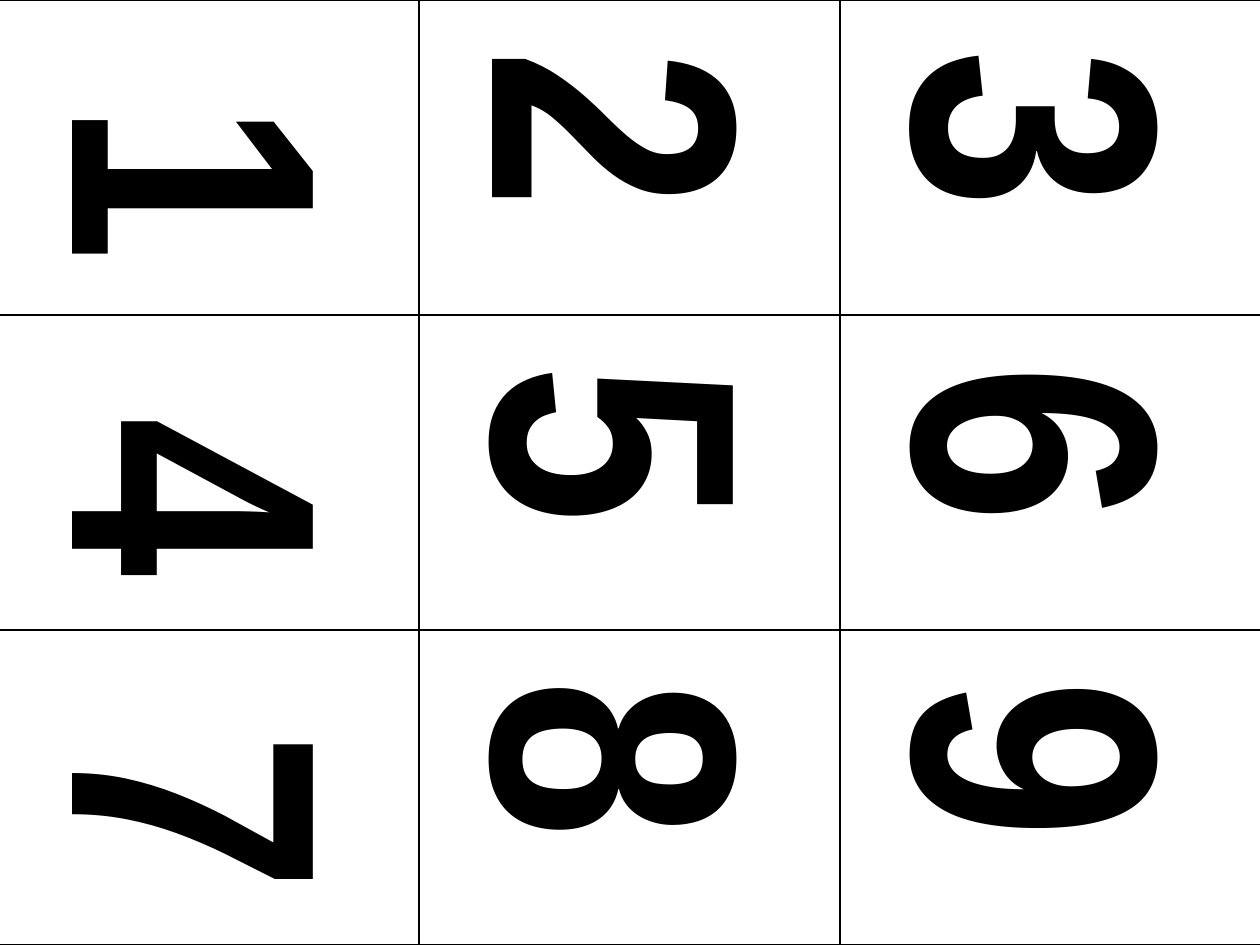
import pptx
import pptx.util
import pptx.dml.color
import pptx.enum.text
import lxml.etree
import pptx.oxml.ns

Cm = pptx.util.Cm
BLACK = pptx.dml.color.RGBColor(0, 0, 0)
ALIGN = pptx.enum.text.PP_ALIGN
SIZE = 3


def border(props, side):
    line = lxml.etree.SubElement(props, pptx.oxml.ns.qn("a:" + side), w="12700")
    fill = lxml.etree.SubElement(line, pptx.oxml.ns.qn("a:solidFill"))
    lxml.etree.SubElement(fill, pptx.oxml.ns.qn("a:srgbClr"), val=str(BLACK))


deck = pptx.Presentation()
deck.slide_width = Cm(25.4)
deck.slide_height = Cm(19.05)
slide = deck.slides.add_slide(deck.slide_layouts[6])

frame = slide.shapes.add_table(SIZE, SIZE, Cm(-0.03), Cm(0), Cm(25.44), Cm(19.05))
grid = frame.table
grid.first_row = False
grid.horz_banding = False
for col in grid.columns:
    col.width = Cm(8.48)
for row in grid.rows:
    row.height = Cm(6.35)

for index, cell in enumerate(grid.iter_cells()):
    cell.margin_left = Cm(1)
    cell.margin_top = cell.margin_right = cell.margin_bottom = Cm(0)
    cell.vertical_anchor = pptx.enum.text.MSO_ANCHOR.MIDDLE
    props = cell._tc.get_or_add_tcPr()
    props.set("vert", "vert")
    for side in ("lnL", "lnR", "lnT", "lnB"):
        border(props, side)
    cell.fill.background()

    para = cell.text_frame.paragraphs[0]
    para.alignment = ALIGN.CENTER if index % SIZE == 0 else ALIGN.LEFT
    run = para.add_run()
    run.text = str(index + 1)
    run.font.name = "Arial Narrow"
    run.font.size = pptx.util.Pt(200)
    run.font.bold = True
    run.font.color.rgb = BLACK
    run.font._element.set("spc", "-300")

deck.save("out.pptx")
